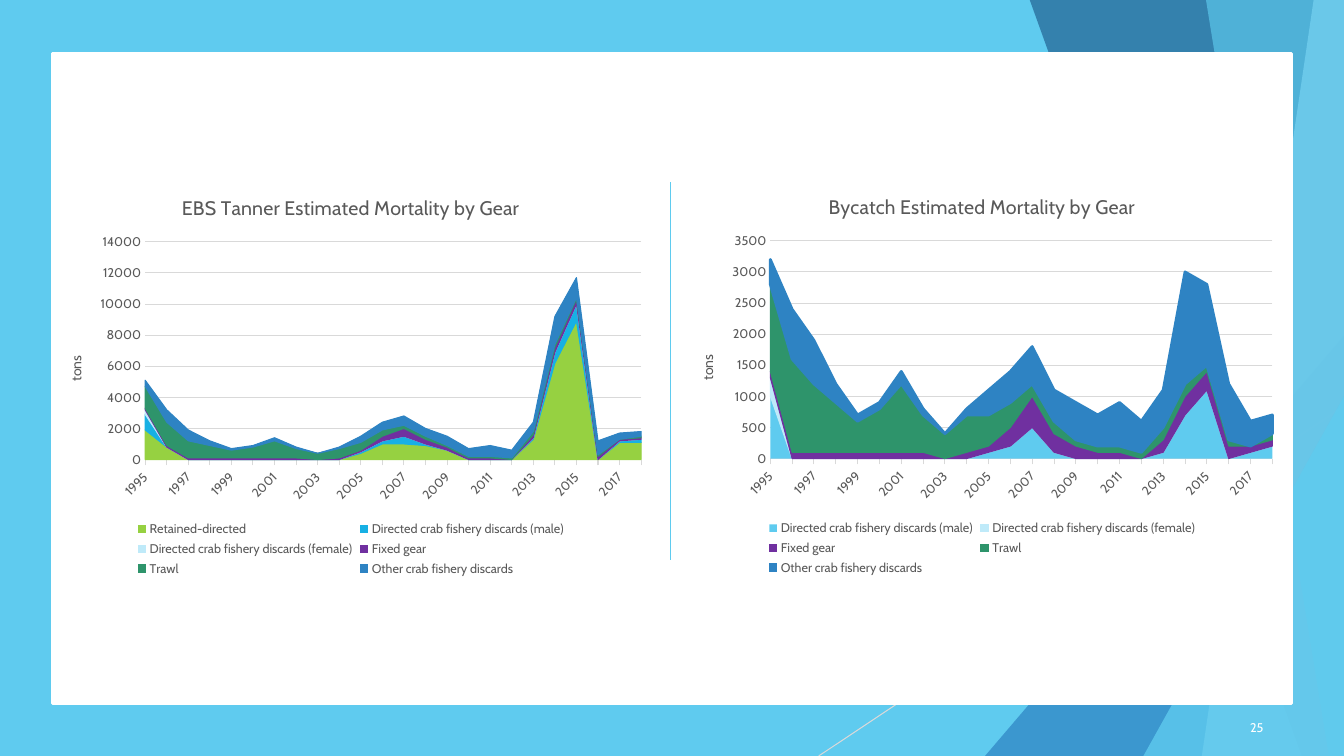
from dataclasses import dataclass
from typing import Optional

from lxml.etree import SubElement
from pptx import Presentation
from pptx.chart.data import CategoryChartData
from pptx.dml.color import RGBColor
from pptx.enum.chart import XL_CHART_TYPE, XL_LEGEND_POSITION, XL_TICK_MARK
from pptx.enum.shapes import MSO_CONNECTOR, MSO_SHAPE
from pptx.enum.text import MSO_ANCHOR, PP_ALIGN
from pptx.oxml import parse_xml
from pptx.oxml.ns import nsdecls, qn
from pptx.util import Inches, Pt

FONT = "Cabin"
SKY = "5FCBEF"
BLUE = "2E83C3"
GRAY = "595959"
PALE = "D9D9D9"
WHITE = "FFFFFF"
WIDE, HIGH = 13.33, 7.5
TOP = -0.01


@dataclass
class Band:
    top: tuple[float, float]
    base: tuple[float, float]
    fill: str
    alpha: int


@dataclass
class Peak:
    left: float
    top: float
    fill: str
    alpha: int


@dataclass
class Layer:
    name: str
    vals: list[Optional[int]]
    fill: str
    line: Optional[float] = 0.75


@dataclass
class Graph:
    title: str
    left: float
    top: float
    plot: tuple[float, float, float, float]
    peak: int
    step: int
    form: str
    layers: list[Layer]


FACETS = [
    Band((12.28, WIDE), (10.04, WIDE), SKY, 30),
    Band((10.5, WIDE), (11.83, WIDE), SKY, 20),
    Peak(9.77, 3.33, BLUE, 72),
    Band((10.21, WIDE), (12.91, WIDE), "226292", 70),
    Band((13.03, WIDE), (11.92, WIDE), "9FE0F5", 70),
    Band((11.96, WIDE), (13.18, WIDE), SKY, 65),
    Peak(11.34, 3.93, SKY, 80),
]

KEPT = [1900, 800, 0, 0, 0, 0, 0, 0, 0, 0, 400, 1000, 1000, 900, 600, 0, 0, 0,
        1300, 6200, 8900, 0, 1100, 1100]
MALE = [1000, 0, *[None] * 8, 100, 200, 500, 100, 0, None, None, None,
        100, 700, 1100, None, 100, 200]
FEMALE = [300, 0, *[None] * 8, *[0] * 5, None, None, None, 0, 0, 0, None, 0, 0]
FIXED = [100, 100, 100, 100, 100, 100, 100, 100, 0, 100, 100, 300, 500, 300,
         200, 100, 100, 0, 200, 300, 300, 200, 100, 100]
TRAWL = [1400, 1500, 1100, 800, 500, 700, 1100, 600, 400, 600, 500, 400, 200,
         200, 100, 100, 100, 100, 200, 200, 100, 100, 0, 100]
OTHER = [400, 800, 700, 300, 100, 100, 200, 100, 0, 100, 400, 500, 600, 500,
         600, 500, 700, 500, 600, 1800, 1300, 900, 400, 300]


def bycatch(male: str, male_line: Optional[float], last_line: float) -> list[Layer]:
    return [
        Layer("Directed crab fishery discards (male)", MALE, male, male_line),
        Layer("Directed crab fishery discards (female)", FEMALE, "BFEAF9"),
        Layer("Fixed gear", FIXED, "7030A0"),
        Layer("Trawl", TRAWL, "2E946B"),
        Layer("Other crab fishery discards", OTHER, BLUE, last_line),
    ]


GRAPHS = [
    Graph("Bycatch Estimated Mortality by Gear", 6.74, 1.75,
          (0.15, 0.16, 0.83, 0.54), 3500, 500, "0", bycatch(SKY, None, 2)),
    Graph("EBS Tanner Estimated Mortality by Gear", 0.48, 1.76,
          (0.16, 0.16, 0.82, 0.54), 14000, 2000, "General",
          [Layer("Retained-directed", KEPT, "96D141"),
           *bycatch("17B0E4", 0.75, 0.75)]),
]


def color(code: str) -> RGBColor:
    return RGBColor.from_string(code)


def paint(shape, fill: str, alpha: int = 100) -> None:
    shape.shadow.inherit = False
    shape.fill.solid()
    shape.fill.fore_color.rgb = color(fill)
    shape.line.fill.background()
    if alpha < 100:
        node = shape.element.spPr.find(".//" + qn("a:srgbClr"))
        SubElement(node, qn("a:alpha")).set("val", str(alpha * 1000))


def style(font, size: float, code: str) -> None:
    font.name = FONT
    font.size = Pt(size)
    font.bold = False
    font.color.rgb = color(code)


def add_box(slide, kind, left: float, top: float, width: float, height: float):
    return slide.shapes.add_shape(
        kind, Inches(left), Inches(top), Inches(width), Inches(height))


def add_line(slide, start: tuple, end: tuple, code: str, width: float) -> None:
    line = slide.shapes.add_connector(
        MSO_CONNECTOR.STRAIGHT, *map(Inches, start + end))
    line.line.color.rgb = color(code)
    line.line.width = Pt(width)
    SubElement(line.element.spPr, qn("a:effectLst"))


def add_band(slide, band: Band) -> None:
    (a, b), (c, d) = band.top, band.base
    pen = slide.shapes.build_freeform(Inches(a), Inches(TOP))
    rest = [(b, TOP), (d, HIGH), (c, HIGH)]
    pen.add_line_segments([(Inches(x), Inches(y)) for x, y in rest], close=True)
    paint(pen.convert_to_shape(), band.fill, band.alpha)


def add_peak(slide, peak: Peak) -> None:
    shape = add_box(slide, MSO_SHAPE.ISOSCELES_TRIANGLE, peak.left, peak.top,
                    WIDE - peak.left, HIGH - peak.top)
    shape.adjustments[0] = 1
    paint(shape, peak.fill, peak.alpha)


def set_title(holder, text: str, size: float) -> None:
    holder.text_frame.text = text
    style(holder.text_frame.paragraphs[0].font, size, GRAY)


def place_plot(chart, plot: tuple[float, float, float, float]) -> None:
    area = chart.element.find(".//" + qn("c:plotArea"))
    for old in area.findall(qn("c:layout")):
        area.remove(old)
    sizes = "".join(f'<c:{key} val="{val}"/>' for key, val in zip("xywh", plot))
    area.insert(0, parse_xml(
        f'<c:layout {nsdecls("c")}><c:manualLayout><c:layoutTarget val="inner"/>'
        f'<c:xMode val="edge"/><c:yMode val="edge"/>{sizes}'
        '</c:manualLayout></c:layout>'))


def add_graph(slide, graph: Graph) -> None:
    data = CategoryChartData(number_format=graph.form)
    data.categories = [str(year) for year in range(1995, 2019)]
    for layer in graph.layers:
        data.add_series(layer.name, layer.vals)
    chart = slide.shapes.add_chart(
        XL_CHART_TYPE.AREA_STACKED, Inches(graph.left), Inches(graph.top),
        Inches(6), Inches(4), data).chart
    style(chart.font, 10, "000000")
    chart.has_title = True
    set_title(chart.chart_title, graph.title, 14)
    chart.plots[0].vary_by_categories = False
    for layer, series in zip(graph.layers, chart.plots[0].series):
        look = series.format
        look.fill.solid()
        look.fill.fore_color.rgb = color(layer.fill)
        if layer.line is None:
            look.line.fill.background()
        else:
            look.line.color.rgb = color(layer.fill)
            look.line.width = Pt(layer.line)

    years, tons = chart.category_axis, chart.value_axis
    for axis in (years, tons):
        style(axis.tick_labels.font, 9, GRAY)
        axis.minor_tick_mark = XL_TICK_MARK.NONE
    years.has_major_gridlines = False
    years.major_tick_mark = XL_TICK_MARK.OUTSIDE
    tons.major_tick_mark = XL_TICK_MARK.NONE
    tons.has_major_gridlines = True
    for rule in (years.format.line, tons.major_gridlines.format.line):
        rule.color.rgb = color(PALE)
        rule.width = Pt(0.75)
    tons.format.line.fill.background()
    tons.minimum_scale, tons.maximum_scale = 0, graph.peak
    tons.major_unit = graph.step
    tons.tick_labels.number_format = graph.form
    tons.tick_labels.number_format_is_linked = False
    set_title(tons.axis_title, "tons", 10)
    turns = {"//c:catAx/c:txPr/a:bodyPr": -45, "//c:valAx/c:title//a:bodyPr": -90}
    for query, angle in turns.items():
        for body in chart.element.xpath(query):
            body.set("rot", str(angle * 60000))
            body.set("vert", "horz")
    for cross in chart.element.xpath("//c:valAx/c:crossBetween"):
        cross.set("val", "midCat")

    chart.has_legend = True
    chart.legend.position = XL_LEGEND_POSITION.BOTTOM
    chart.legend.include_in_layout = False
    style(chart.legend.font, 9, GRAY)
    place_plot(chart, graph.plot)


def add_number(slide, text: str) -> None:
    box = slide.shapes.add_textbox(
        Inches(11.88), Inches(7.02), Inches(0.75), Inches(0.4))
    frame = box.text_frame
    frame.word_wrap = True
    frame.vertical_anchor = MSO_ANCHOR.MIDDLE
    line = frame.paragraphs[0]
    line.text = text
    line.alignment = PP_ALIGN.RIGHT
    line.space_after = Pt(6)
    style(line.font, 9, WHITE)


def main() -> None:
    deck = Presentation()
    deck.slide_width, deck.slide_height = Inches(WIDE), Inches(HIGH)
    slide = deck.slides.add_slide(deck.slide_layouts[6])
    paint(add_box(slide, MSO_SHAPE.RECTANGLE, 0, 0, WIDE, HIGH), SKY)
    add_line(slide, (WIDE, 4.03), (8.12, HIGH), PALE, 0.75)
    for facet in FACETS:
        if isinstance(facet, Band):
            add_band(slide, facet)
        else:
            add_peak(slide, facet)
    panel = add_box(slide, MSO_SHAPE.RECTANGLE, 0.52, 0.53, 12.29, 6.45)
    paint(panel, WHITE)
    panel.line.color.rgb = color(WHITE)
    panel.line.width = Pt(1.75)
    add_line(slide, (6.65, 1.81), (6.65, 5.56), SKY, 1)
    add_number(slide, "25")
    for graph in GRAPHS:
        add_graph(slide, graph)
    deck.save("out.pptx")


if __name__ == "__main__":
    main()
